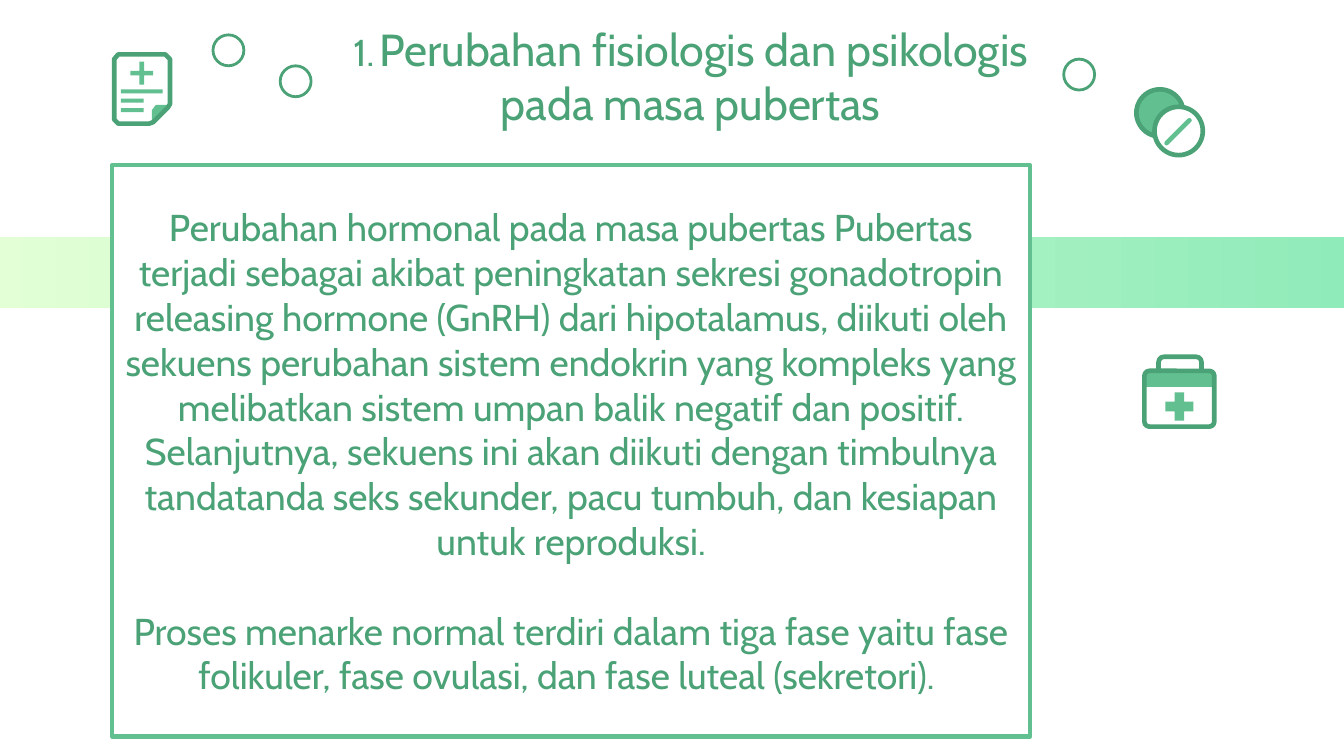
from dataclasses import dataclass
from typing import Any, Optional

from pptx import Presentation
from pptx import util as u
from pptx.dml.color import RGBColor
from pptx.enum import shapes, text
from pptx.oxml.ns import qn

COLUMNS, ROWS = 100, 56.25  # square cells, a tenth of an inch each
DARK, MID, WHITE = "4AA276", "62C090", "FFFFFF"
BAND_START, BAND_END = "E3FFD5", "90EBBA"
FONT = "Cabin"
KIND = shapes.MSO_SHAPE
ICON_LINE = 2.5

TITLE = "Perubahan fisiologis dan psikologis pada masa pubertas"
HORMONES = (
    "Perubahan hormonal pada masa pubertas Pubertas terjadi sebagai akibat "
    "peningkatan sekresi gonadotropin releasing hormone (GnRH) dari hipotalamus, "
    "diikuti oleh sekuens perubahan sistem endokrin yang kompleks yang melibatkan "
    "sistem umpan balik negatif dan positif. Selanjutnya, sekuens ini akan diikuti "
    "dengan timbulnya tandatanda seks sekunder, pacu tumbuh, dan kesiapan untuk "
    "reproduksi."
)
MENARCHE = (
    "Proses menarke normal terdiri dalam tiga fase yaitu fase folikuler, "
    "fase ovulasi, dan fase luteal (sekretori). "
)


@dataclass
class Part:
    """A preset shape placed in grid cells."""
    kind: Any
    column: float
    row: float
    columns: float
    rows: float
    fill: Optional[str] = None
    line: Optional[str] = None
    weight: float = ICON_LINE
    adjust: Optional[float] = None


@dataclass
class Outline:
    """A closed polygon whose corners are grid cells."""
    corners: list
    fill: Optional[str] = None
    line: Optional[str] = None
    weight: float = ICON_LINE


BAND = Part(KIND.RECTANGLE, -0.8, 17.65, 101.6, 5.25)
PANEL = Part(KIND.RECTANGLE, 8.35, 12.3, 68.3, 42.5, WHITE, MID, 2.25)
BUBBLES = [Part(KIND.OVAL, column, row, 2.3, 2.3, line=DARK, weight=1.5)
           for column, row in [(15.85, 2.6), (79.15, 4.4), (20.85, 4.9)]]
FIRST_AID_KIT = [
    Part(KIND.ROUNDED_RECTANGLE, 86.2, 26.55, 3.2, 1.6, line=DARK, adjust=0.25),
    Part(KIND.ROUNDED_RECTANGLE, 85.15, 27.6, 5.2, 4.15, WHITE, adjust=0.09),
    Part(KIND.RECTANGLE, 85.2, 27.6, 5.1, 1.2, MID),
    Part(KIND.ROUNDED_RECTANGLE, 85.15, 27.6, 5.2, 4.15, line=DARK, adjust=0.09),
    Part(KIND.CROSS, 86.7, 29.2, 2.1, 2.1, MID, adjust=0.33),
]
MEDICAL_RECORD = [
    Outline([(11.3, 9.2), (11.3, 8.2), (11.6, 7.8), (12.5, 7.8), (12.5, 7.9)], MID),
    Outline([(8.8, 4.05), (12.3, 4.05), (12.65, 4.4), (12.65, 7.75), (12.5, 8),
             (11.4, 9.1), (11.1, 9.2), (8.8, 9.2), (8.5, 8.9), (8.5, 4.4)],
            line=DARK),
    *[Part(KIND.RECTANGLE, 9, 6.65 + 0.7 * index, columns, 0.3, MID)
      for index, columns in enumerate([3.1, 1.7, 1.7])],
    Part(KIND.CROSS, 9.7, 4.6, 1.7, 1.7, MID, adjust=0.4),
]
PILLS = [
    Part(KIND.OVAL, 84.55, 6.65, 3.5, 3.5, MID, DARK),
    Part(KIND.OVAL, 85.9, 7.95, 3.6, 3.6, WHITE, DARK),
]
PILL_SCORE = (86.8, 10.65, 88.5, 8.95)


def cells(count: float) -> int:
    return u.Inches(count / 10)


def color(value: str) -> RGBColor:
    return RGBColor.from_string(value)


def paint(shape, fill: Optional[str], line: Optional[str], weight: float) -> None:
    shape.shadow.inherit = False
    if fill:
        shape.fill.solid()
        shape.fill.fore_color.rgb = color(fill)
    else:
        shape.fill.background()
    if line:
        shape.line.color.rgb = color(line)
        shape.line.width = u.Pt(weight)
    else:
        shape.line.fill.background()


def draw_part(container, part: Part):
    shape = container.add_shape(part.kind, cells(part.column), cells(part.row),
                                cells(part.columns), cells(part.rows))
    if part.adjust is not None:
        shape.adjustments[0] = part.adjust
    paint(shape, part.fill, part.line, part.weight)
    return shape


def draw_outline(container, outline: Outline):
    points = [(cells(column), cells(row)) for column, row in outline.corners]
    builder = container.build_freeform(*points[0])
    builder.add_line_segments(points[1:], close=True)
    shape = builder.convert_to_shape()
    paint(shape, outline.fill, outline.line, outline.weight)
    return shape


def draw_icon(slide, parts: list):
    group = slide.shapes.add_group_shape()
    for part in parts:
        draw = draw_part if isinstance(part, Part) else draw_outline
        draw(group.shapes, part)
    return group


def draw_stroke(container, ends: tuple, line: str, weight: float) -> None:
    connector = container.add_connector(shapes.MSO_CONNECTOR.STRAIGHT,
                                        *[cells(end) for end in ends])
    connector.line.color.rgb = color(line)
    connector.line.width = u.Pt(weight)
    connector.line._get_or_add_ln().set("cap", "rnd")
    properties = connector._element.spPr
    properties.append(properties.makeelement(qn("a:effectLst"), {}))


def write(paragraph, content: str, size: float, before: float = 0) -> None:
    """Add a run to a centred paragraph."""
    paragraph.alignment = text.PP_ALIGN.CENTER
    paragraph.space_before = u.Pt(before)
    paragraph.line_spacing = 1.0
    run = paragraph.add_run()
    run.text = content
    run.font.name = FONT
    run.font.size = u.Pt(size)
    run.font.color.rgb = color(DARK)


def set_frame(frame, left: float = 1, vertical: float = 1) -> None:
    frame.word_wrap = True
    frame.auto_size = text.MSO_AUTO_SIZE.NONE
    frame.vertical_anchor = text.MSO_ANCHOR.MIDDLE
    frame.margin_left, frame.margin_right = cells(left), cells(1)
    frame.margin_top = frame.margin_bottom = cells(vertical)


def draw_band(slide) -> None:
    band = draw_part(slide.shapes, BAND)
    band.fill.gradient()
    band.fill.gradient_angle = 0
    for stop, value, position in zip(band.fill.gradient_stops,
                                     (BAND_START, BAND_END), (0, 1)):
        stop.color.rgb = color(value)
        stop.position = position


def draw_title(slide) -> None:
    title = slide.shapes.title
    title.left, title.top = cells(20.85), cells(1.55)
    title.width, title.height = cells(57.3), cells(8.2)
    set_frame(title.text_frame, left=4.8, vertical=0)
    paragraph = title.text_frame.paragraphs[0]
    for content, size in [("1.", 20), (" ", 12), (TITLE, 24)]:
        write(paragraph, content, size)


def draw_panel(slide) -> None:
    frame = draw_part(slide.shapes, PANEL).text_frame
    set_frame(frame)
    write(frame.paragraphs[0], HORMONES, 20)
    write(frame.add_paragraph(), MENARCHE, 20, before=24)


def main() -> None:
    presentation = Presentation()
    presentation.slide_width, presentation.slide_height = cells(COLUMNS), cells(ROWS)
    slide = presentation.slides.add_slide(presentation.slide_layouts[5])
    draw_band(slide)
    for bubble in BUBBLES:
        draw_part(slide.shapes, bubble)
    draw_title(slide)
    draw_icon(slide, FIRST_AID_KIT)
    draw_icon(slide, MEDICAL_RECORD)
    pills = draw_icon(slide, PILLS)
    draw_stroke(pills.shapes, PILL_SCORE, MID, ICON_LINE)
    draw_panel(slide)
    presentation.save("out.pptx")


if __name__ == "__main__":
    main()
